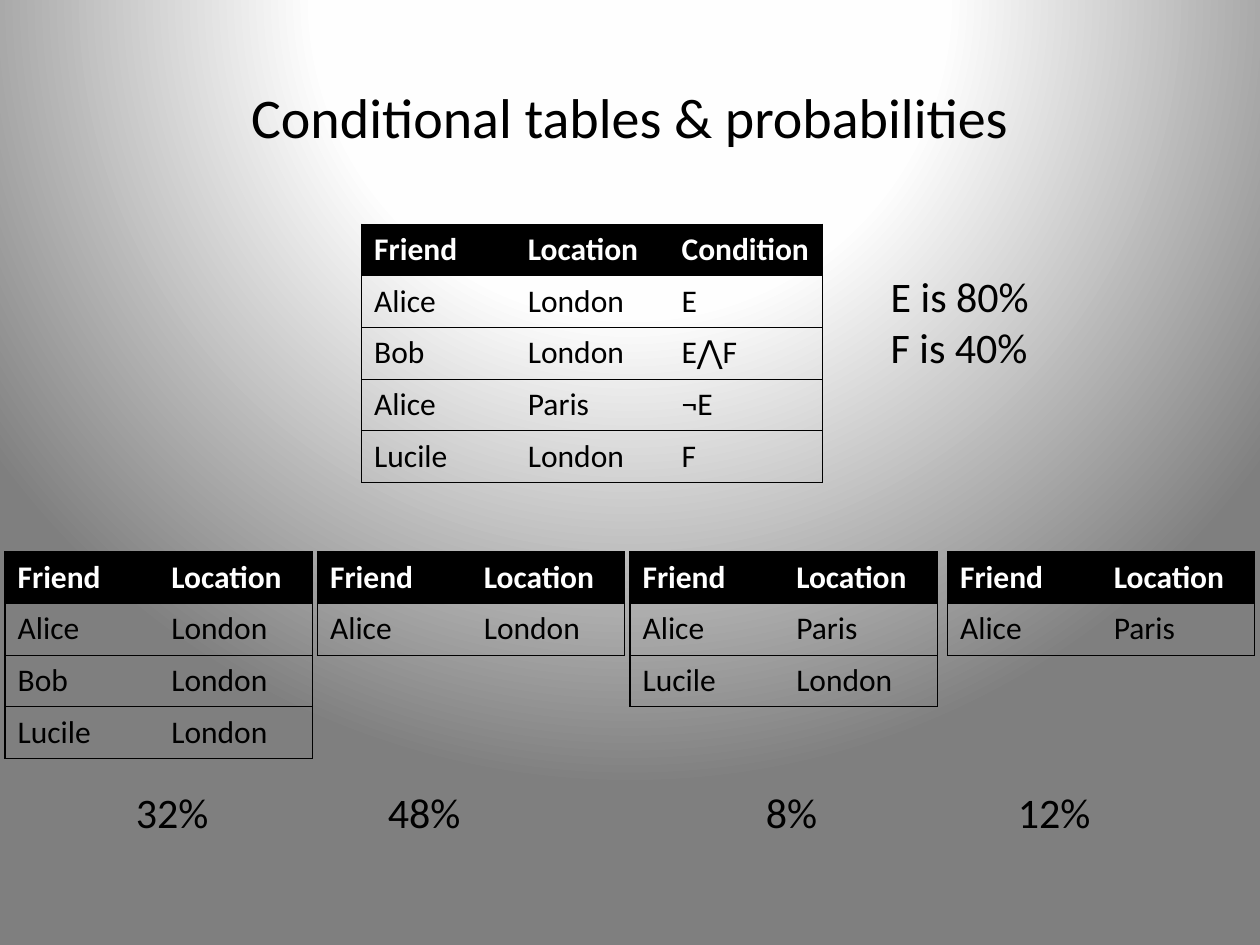
from pptx import Presentation
from pptx import util as u
from pptx.dml.color import RGBColor
from pptx.enum import text
from pptx.oxml import parse_xml
from pptx.oxml.ns import nsdecls

FONT = "Calibri"
COLUMN_WIDTH = 1.22
ROW_HEIGHT = 0.41
PLAIN_TABLE_STYLE = "{2D5ABB26-0587-4C30-8999-92F81FD0307C}"
HEADINGS = ["Friend", "Location"]
CONDITIONAL_ROWS = [
    HEADINGS + ["Condition"],
    ["Alice", "London", "E"],
    ["Bob", "London", "E⋀F"],
    ["Alice", "Paris", "¬E"],
    ["Lucile", "London", "F"],
]
WORLDS = [
    (0.04, [["Alice", "London"], ["Bob", "London"], ["Lucile", "London"]]),
    (2.52, [["Alice", "London"]]),
    (5, [["Alice", "Paris"], ["Lucile", "London"]]),
    (7.52, [["Alice", "Paris"]]),
]


def colour(value):
    """Turn a hex string into a colour."""
    return RGBColor.from_string(value)


def format_text(text_frame, size, hex_colour="000000", bold=False, align=None):
    """Format every run of a text frame."""
    for paragraph in text_frame.paragraphs:
        paragraph.alignment = align
        for run in paragraph.runs:
            run.font.name = FONT
            run.font.size = u.Pt(size)
            run.font.bold = bold
            run.font.color.rgb = colour(hex_colour)


def set_background(slide):
    """Fill the slide with a radial gradient centred above its top edge."""
    stops = "".join(
        f'<a:gs pos="{position * 1000}"><a:srgbClr val="{value}"/></a:gs>'
        for position, value in [(0, "FFFFFF"), (40, "FEFEFE"), (100, "7F7F7F")]
    )
    slide.element.cSld.insert(0, parse_xml(
        f'<p:bg {nsdecls("p", "a")}><p:bgPr><a:gradFill rotWithShape="1">'
        f'<a:gsLst>{stops}</a:gsLst><a:path path="circle">'
        '<a:fillToRect l="50000" t="-80000" r="50000" b="180000"/></a:path>'
        '</a:gradFill><a:effectLst/></p:bgPr></p:bg>'
    ))


def add_title(slide, left, top, width, height):
    """Place the title placeholder in its box."""
    title = slide.shapes.title
    title.left, title.top = u.Inches(left), u.Inches(top)
    title.width, title.height = u.Inches(width), u.Inches(height)
    title.text_frame.text = "Conditional tables & probabilities"
    title.text_frame.vertical_anchor = text.MSO_ANCHOR.MIDDLE
    format_text(title.text_frame, 32, align=text.PP_ALIGN.CENTER)


def add_borders(cell, sides):
    """Draw thin black lines on the given sides of a cell."""
    properties = cell._tc.get_or_add_tcPr()
    for side in sides:
        properties.append(parse_xml(
            f'<a:ln{side} {nsdecls("a")} w="{u.Pt(0.75)}"><a:solidFill>'
            f'<a:srgbClr val="000000"/></a:solidFill></a:ln{side}>'
        ))


def add_relation(slide, left, top, rows):
    """Add a table with a black heading row and ruled, unfilled body rows."""
    column_count = len(rows[0])
    table = slide.shapes.add_table(
        len(rows), column_count, u.Inches(left), u.Inches(top),
        u.Inches(COLUMN_WIDTH * column_count), u.Inches(ROW_HEIGHT * len(rows)),
    ).table
    table.horz_banding = False
    table._tbl.tblPr.find("{*}tableStyleId").text = PLAIN_TABLE_STYLE
    for column in table.columns:
        column.width = u.Inches(COLUMN_WIDTH)
    for row_index, values in enumerate(rows):
        table.rows[row_index].height = u.Inches(ROW_HEIGHT)
        is_heading = row_index == 0
        for column_index, value in enumerate(values):
            cell = table.cell(row_index, column_index)
            left_side = ["L"] if column_index == 0 else []
            right_side = ["R"] if column_index == column_count - 1 else []
            add_borders(cell, left_side + right_side + ["T", "B"])
            if is_heading:
                cell.fill.solid()
                cell.fill.fore_color.rgb = colour("000000")
            else:
                cell.fill.background()
            cell.text_frame.text = value
            format_text(cell.text_frame, 18,
                        "FFFFFF" if is_heading else "000000", is_heading)


def add_label(slide, left, top, width, height, wording, wrap=True):
    """Add a text box with tab stops one inch apart."""
    text_frame = slide.shapes.add_textbox(
        u.Inches(left), u.Inches(top), u.Inches(width), u.Inches(height)
    ).text_frame
    text_frame.word_wrap = wrap
    text_frame.text = wording
    format_text(text_frame, 24)
    for paragraph in text_frame.paragraphs:
        properties = paragraph._p.get_or_add_pPr()
        properties.set("defTabSz", str(u.Inches(1)))


def main():
    """Build and save the presentation."""
    presentation = Presentation()
    presentation.slide_width = u.Inches(10)
    presentation.slide_height = u.Inches(7.5)
    slide = presentation.slides.add_slide(presentation.slide_layouts[5])
    set_background(slide)
    add_title(slide, 0.5, 0.3, 9, 1.25)
    add_relation(slide, 2.87, 1.78, CONDITIONAL_ROWS)
    for left, rows in WORLDS:
        add_relation(slide, left, 4.38, [HEADINGS] + rows)
    add_label(slide, 0.98, 6.19, 8.27, 0.5, "32%\t\t48%\t\t\t8%\t\t12%")
    add_label(slide, 6.97, 2.1, 1.31, 0.91, "E is 80%\nF is 40%", wrap=False)
    presentation.save("out.pptx")


if __name__ == "__main__":
    main()
